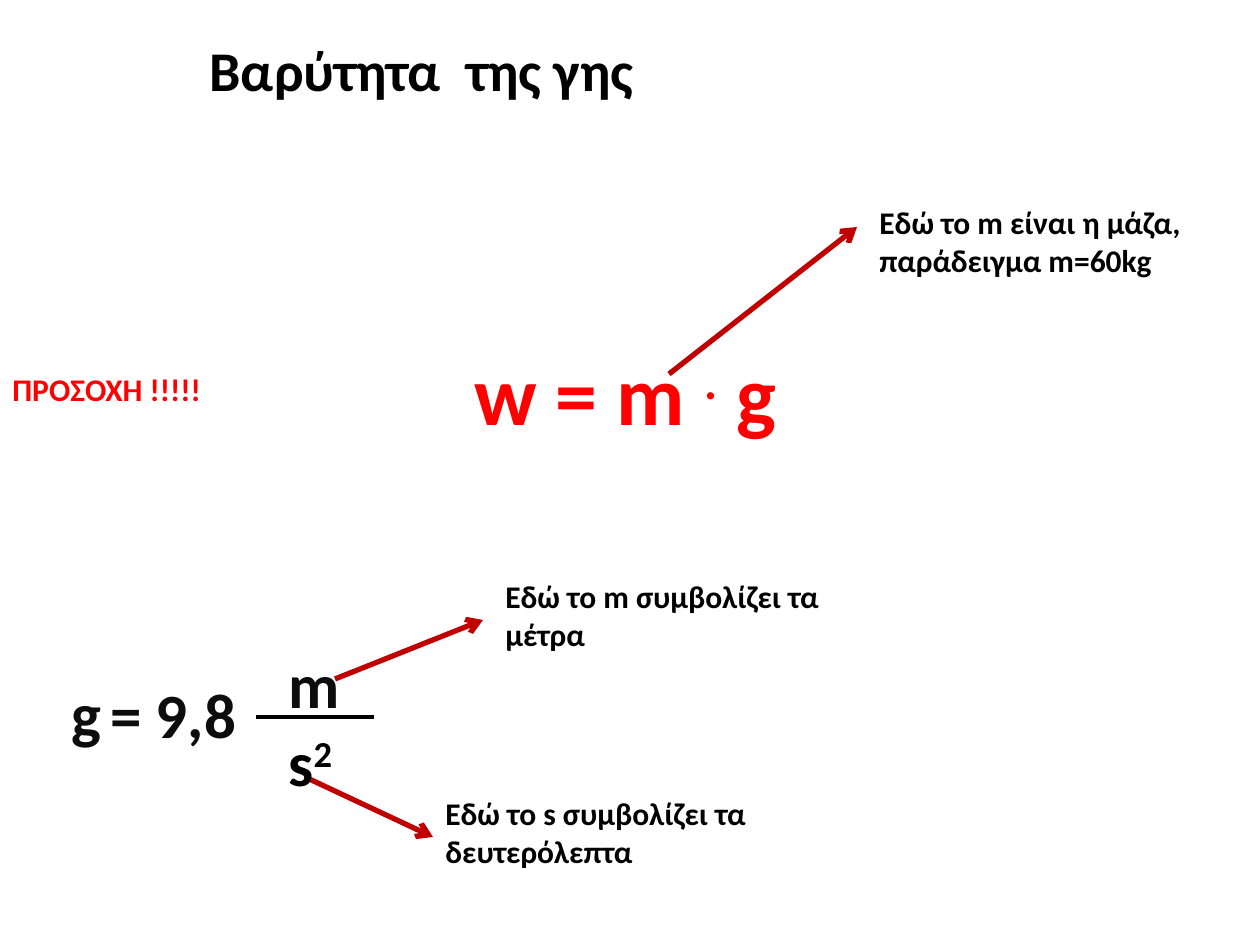
from lxml import etree
from pptx import Presentation, util as u
from pptx.dml.color import RGBColor
from pptx.enum import shapes, text
from pptx.oxml import ns

BLACK = RGBColor(0, 0, 0)
DARK = RGBColor(0x0D, 0x0D, 0x0D)
RED = RGBColor(0xFF, 0, 0)
CRIMSON = RGBColor(0xC0, 0, 0)
PX = u.Inches(1) / 126


def px(*values):
    return [u.Emu(round(v * PX)) for v in values]


def write(sp, content, size=18, color=BLACK, wrap=True):
    tf = sp.text_frame
    tf.word_wrap = wrap
    tf.auto_size = text.MSO_AUTO_SIZE.NONE
    tf.vertical_anchor = text.MSO_ANCHOR.TOP
    p = tf.paragraphs[0]
    p.alignment = text.PP_ALIGN.LEFT
    for i, part in enumerate(content.split("^")):
        r = p.add_run()
        r.text = part
        r.font.name = "Calibri"
        r.font.size = u.Pt(size)
        r.font.bold = True
        r.font.color.rgb = color
        if i == 1:
            r.font._element.set("baseline", "30000")


prs = Presentation()
prs.slide_width, prs.slide_height = px(1260, 945)
s = prs.slides.add_slide(prs.slide_layouts[5])

title = s.shapes.title
title.left, title.top, title.width, title.height = px(197, 29, 659, 81)
write(title, "Βαρύτητα  της γης", size=32)

lines = [
    (669, 374, 857, 227, CRIMSON, 3, True),
    (335, 679, 483, 620, CRIMSON, 3, True),
    (305, 777, 433, 837, CRIMSON, 3, True),
    (256, 717, 374, 717, BLACK, 2.5, False),
]
for x1, y1, x2, y2, color, width, arrow in lines:
    c = s.shapes.add_connector(shapes.MSO_CONNECTOR.STRAIGHT, *px(x1, y1, x2, y2))
    c.line.color.rgb = color
    c.line.width = u.Pt(width)
    if arrow:
        etree.SubElement(c.line._get_or_add_ln(), ns.qn("a:tailEnd"), type="arrow")
    etree.SubElement(c._element.spPr, ns.qn("a:effectLst"))

labels = [
    (0, 364, 286, 50, "ΠΡΟΣΟΧΗ !!!!!", dict(color=RED)),
    (867, 197, 393, 89, "Εδώ το m είναι η μάζα, παράδειγμα m=60kg", {}),
    (493, 571, 393, 89, "Εδώ το m συμβολίζει τα μέτρα", {}),
    (433, 788, 393, 89, "Εδώ το s συμβολίζει τα δευτερόλεπτα", {}),
    (462, 335, 522, 115, "w = m ^.^ g", dict(size=48, color=RED)),
    (59, 668, 79, 89, "g", dict(size=36, color=DARK)),
    (98, 669, 152, 89, "= 9,8", dict(size=36, color=DARK, wrap=False)),
    (276, 639, 88, 89, "m", dict(size=36, color=DARK)),
    (276, 717, 72, 89, "s^2", dict(size=36, wrap=False)),
]
for x, y, w, h, content, style in labels:
    sp = s.shapes.add_textbox(*px(x, y, w, h))
    write(sp, content, **style)

prs.save("out.pptx")
